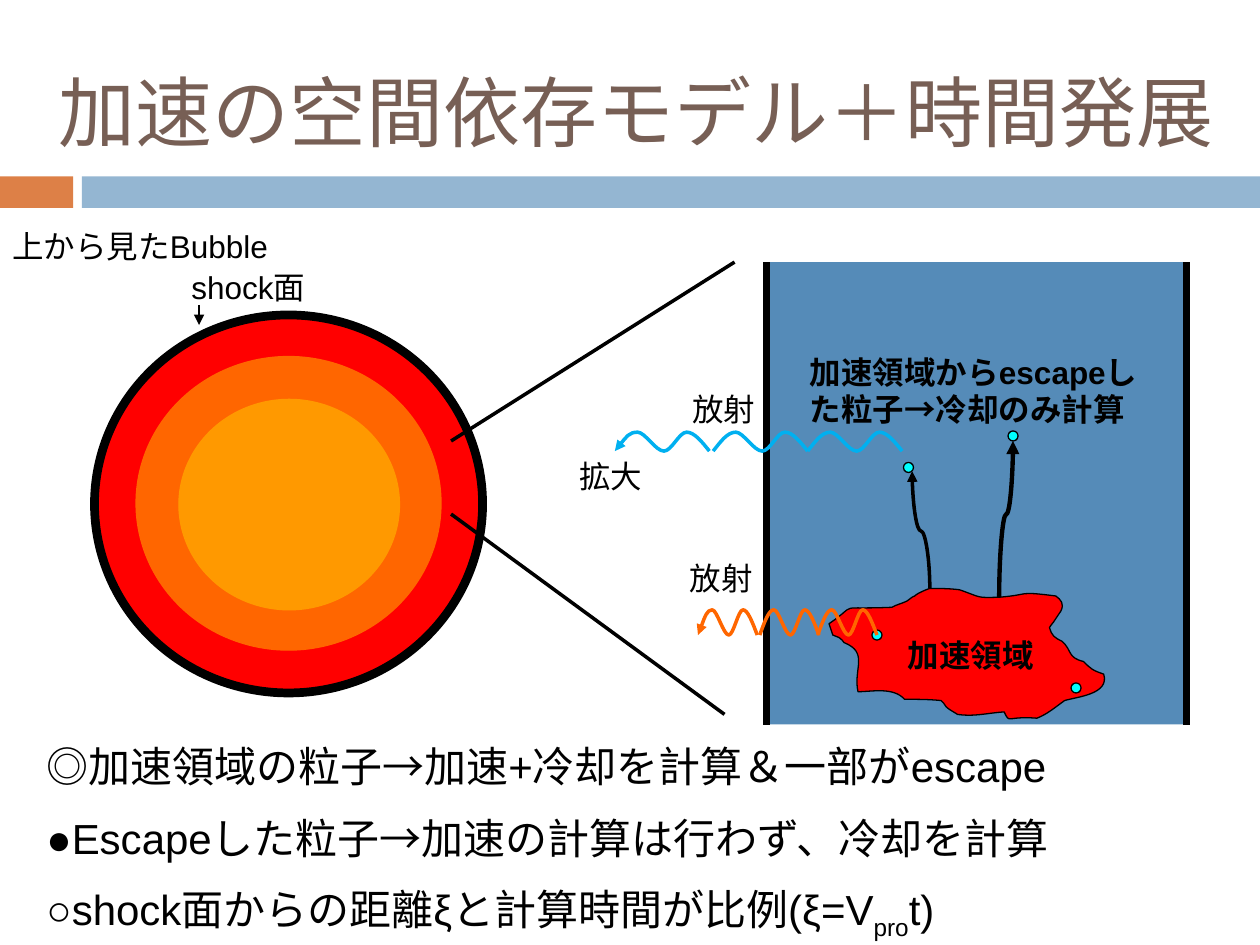
from lxml import etree
from pptx import Presentation
from pptx import util as u
from pptx.dml.color import RGBColor
from pptx.enum import shapes, text
from pptx.oxml.ns import qn

BLACK = RGBColor(0x00, 0x00, 0x00)
RED = RGBColor(0xFF, 0x00, 0x00)
ORANGE = RGBColor(0xFF, 0x66, 0x00)
AMBER = RGBColor(0xFF, 0x99, 0x00)
CYAN = RGBColor(0x00, 0xFF, 0xFF)
SKY = RGBColor(0x00, 0xB0, 0xF0)
STEEL = RGBColor(0x55, 0x8B, 0xB8)
PALE = RGBColor(0x94, 0xB6, 0xD2)
RUST = RGBColor(0xDD, 0x80, 0x47)
BROWN = RGBColor(0x77, 0x5F, 0x55)

RECT = shapes.MSO_SHAPE.RECTANGLE
OVAL = shapes.MSO_SHAPE.OVAL
MID = text.PP_ALIGN.CENTER

# One wave in a unit box: a start, then three points per Bezier curve
WAVE = [(0, 1), (.08, .5), (.15, 0), (.24, 0), (.32, 0), (.43, 1), (.52, 1),
        (.6, 1), (.68, 0), (.76, 0), (.84, 0), (.92, .5), (1, 1)]

# Outline of the acceleration region, in inches
REGION = [
    (7.97, 5.65), (7.83, 5.66), (7.73, 5.69), (7.6, 5.67),
    (7.57, 5.65), (7.53, 5.63), (7.51, 5.61),
    (7.49, 5.59), (7.49, 5.57), (7.47, 5.56),
    (7.37, 5.55), (7.28, 5.55), (7.18, 5.55),
    (7.09, 5.45), (6.92, 5.49), (6.81, 5.49),
    (6.77, 5.31), (6.9, 5.18), (6.7, 5.1),
    (6.69, 5.09), (6.68, 5.07), (6.66, 5.06),
    (6.65, 5.05), (6.62, 5.05), (6.61, 5.04),
    (6.6, 5.01), (6.58, 4.95), (6.58, 4.95),
    (6.83, 4.78), (6.61, 4.84), (7.08, 4.82),
    (7.11, 4.8), (7.16, 4.79), (7.2, 4.77),
    (7.22, 4.76), (7.23, 4.74), (7.26, 4.73),
    (7.29, 4.7), (7.38, 4.67), (7.38, 4.67),
    (7.45, 4.67), (7.53, 4.67), (7.61, 4.68),
    (7.62, 4.68), (7.72, 4.72), (7.75, 4.73),
    (7.81, 4.75), (7.87, 4.74), (7.93, 4.74),
    (8.19, 4.72), (8.06, 4.69), (8.38, 4.73),
    (8.42, 4.76), (8.45, 4.79), (8.42, 4.85),
    (8.4, 4.88), (8.38, 4.91), (8.36, 4.94),
    (8.35, 4.95), (8.33, 4.98), (8.33, 4.98),
    (8.35, 5.05), (8.37, 5.06), (8.43, 5.09),
    (8.51, 5.16), (8.47, 5.22), (8.6, 5.25),
    (8.66, 5.31), (8.67, 5.32), (8.76, 5.35),
    (8.81, 5.51), (8.55, 5.53), (8.45, 5.56),
    (8.38, 5.61), (8.31, 5.67), (8.23, 5.7),
    (7.98, 5.68), (8.02, 5.75), (7.97, 5.65)]


def paint(item, fill=None, line=None, width=0.75):
    item.shadow.inherit = False
    if fill is None:
        item.fill.background()
    else:
        item.fill.solid()
        item.fill.fore_color.rgb = fill
    if line is None:
        item.line.fill.background()
    else:
        item.line.color.rgb = line
        item.line.width = u.Pt(width)


def tip(item, end):
    line = item._element.spPr.find(qn("a:ln"))
    etree.SubElement(line, qn(end)).set("type", "triangle")


def block(slide, kind, box, fill, line=None, width=0.75):
    item = slide.shapes.add_shape(kind, *map(u.Inches, box))
    paint(item, fill, line, width)


def link(slide, start, end, width, arrow=False,
         kind=shapes.MSO_CONNECTOR.STRAIGHT):
    item = slide.shapes.add_connector(kind, *map(u.Inches, start + end))
    item.line.color.rgb = BLACK
    item.line.width = u.Pt(width)
    if arrow:
        tip(item, "a:tailEnd")
    etree.SubElement(item._element.spPr, qn("a:effectLst"))
    return item


def rise(slide, start, end, width, bend):
    """Curved arrow that leaves and arrives upright: a turned connector."""
    (x1, y1), (x2, y2) = start, end
    midx, midy = (x1 + x2) / 2, (y1 + y2) / 2
    side = 1 if x2 > x1 else -1
    dx, dy = side * (y1 - y2) / 2, abs(x2 - x1) / 2
    item = link(slide, (midx - dx, midy - dy), (midx + dx, midy + dy), width,
                True, shapes.MSO_CONNECTOR.CURVE)
    props = item._element.spPr
    turn = 270 if side > 0 else 90
    props.find(qn("a:xfrm")).set("rot", str(turn * 60000))
    guide = etree.SubElement(props.find(qn("a:prstGeom")).find(qn("a:avLst")),
                             qn("a:gd"))
    guide.set("name", "adj1")
    guide.set("fmla", f"val {round(bend * 100000)}")


def curve(parent, points, close=False, **style):
    """Freeform whose segments become Bezier curves, three points each."""
    spots = [(u.Inches(x), u.Inches(y)) for x, y in points]
    pen = parent.shapes.build_freeform(*spots[0], scale=1.0)
    pen.add_line_segments(spots[1:], close=close)
    item = pen.convert_to_shape()
    for i, seg in enumerate(list(item._element.iter(qn("a:lnTo")))):
        if i % 3 == 0:
            bez = etree.Element(qn("a:cubicBezTo"))
            seg.addprevious(bez)
        bez.append(seg[0])
        seg.getparent().remove(seg)
    paint(item, **style)
    return item


def waves(slide, lefts, top, wide, high, color):
    """Row of waves; the first one carries the arrowhead."""
    group = slide.shapes.add_group_shape()
    for i, left in enumerate(lefts):
        points = [(left + x * wide, top + y * high) for x, y in WAVE]
        item = curve(group, points, line=color, width=2)
        if i == 0:
            tip(item, "a:headEnd")


def write(slide, lines, box, size=18, font="Arial", color=BLACK, bold=False,
          align=None, anchor=text.MSO_ANCHOR.TOP, gap=0):
    """Each line is a string or a list of (string, is subscript) pairs."""
    frame = slide.shapes.add_textbox(*map(u.Inches, box)).text_frame
    frame.word_wrap = True
    frame.vertical_anchor = anchor
    for i, line in enumerate(lines):
        para = frame.add_paragraph() if i else frame.paragraphs[0]
        para.alignment = align
        para.space_before = u.Pt(gap)
        for words, sub in [(line, False)] if isinstance(line, str) else line:
            run = para.add_run()
            run.text = words
            run.font.size = u.Pt(size)
            run.font.name = font
            run.font.bold = bold
            run.font.color.rgb = color
            if sub:
                run._r.get_or_add_rPr().set("baseline", "-25000")


def main():
    deck = Presentation()
    deck.slide_width, deck.slide_height = u.Inches(10), u.Inches(7.5)
    slide = deck.slides.add_slide(deck.slide_layouts[6])

    # Title and bars
    block(slide, RECT, (0, 1.4, 0.58, 0.25), RUST)
    block(slide, RECT, (0.65, 1.4, 9.35, 0.25), PALE)
    write(slide, ["加速の空間依存モデル＋時間発展"], (0.27, 0.25, 9.56, 1.25),
          size=44, font="Calibri", color=BROWN, align=MID,
          anchor=text.MSO_ANCHOR.MIDDLE)

    # Bubble seen from above
    block(slide, RECT, (6.08, 2.08, 3.33, 3.67), STEEL)
    block(slide, OVAL, (0.75, 2.5, 3.08, 3), RED, BLACK, 5)
    block(slide, OVAL, (1.08, 2.83, 2.42, 2.33), ORANGE, ORANGE)
    block(slide, OVAL, (1.42, 3.17, 1.75, 1.67), AMBER, AMBER)
    write(slide, ["shock面"], (1.42, 2.08, 1.17, 0.4))
    link(slide, (1.58, 2.42), (1.58, 2.58), 0.75, arrow=True)
    write(slide, ["上から見たBubble"], (0, 1.75, 2.83, 0.4))

    # Enlarged panel with the acceleration region
    for x in (9.42, 6.08):
        link(slide, (x, 2.08), (x, 5.75), 4)
    curve(slide, REGION, close=True, fill=RED, line=BLACK)
    for x, y in ((6.92, 5), (8.5, 5.42), (8, 3.42), (7.17, 3.67)):
        block(slide, OVAL, (x, y, 0.08, 0.08), CYAN, BLACK)
    write(slide, ["加速領域"], (7.08, 5, 1.25, 0.4), bold=True, align=MID)
    rise(slide, (7.38, 4.67), (7.24, 3.74), 2, 0.49)
    rise(slide, (7.93, 4.74), (8.04, 3.5), 2.5, 0.53)
    write(slide, ["加速領域からescapeした粒子→冷却のみ計算"],
          (6.33, 2.75, 2.92, 0.7), bold=True)

    # Zoom lines
    link(slide, (5.83, 2.08), (3.58, 3.5), 2)
    link(slide, (5.75, 5.67), (3.58, 4.08), 2)
    write(slide, ["拡大"], (4.5, 3.58, 0.75, 0.4))

    # Radiation
    waves(slide, (4.88, 5.66, 6.41), 3.43, 0.75, 0.15, SKY)
    waves(slide, (5.54, 6.03, 6.49), 4.84, 0.47, 0.2, ORANGE)
    for x, y in ((5.35, 4.39), (5.37, 3.05)):
        write(slide, ["放射"], (x, y, 0.75, 0.4), align=MID)

    # Notes on the calculation
    write(slide, ["◎加速領域の粒子→加速+冷却を計算＆一部がescape",
                  "●Escapeした粒子→加速の計算は行わず、冷却を計算",
                  [("○shock面からの距離ξと計算時間が比例(ξ=V", False),
                   ("pro", True), ("t)", False)]],
          (0.27, 5.83, 9.5, 1.72), size=24, gap=12)

    deck.save("out.pptx")


if __name__ == "__main__":
    main()
